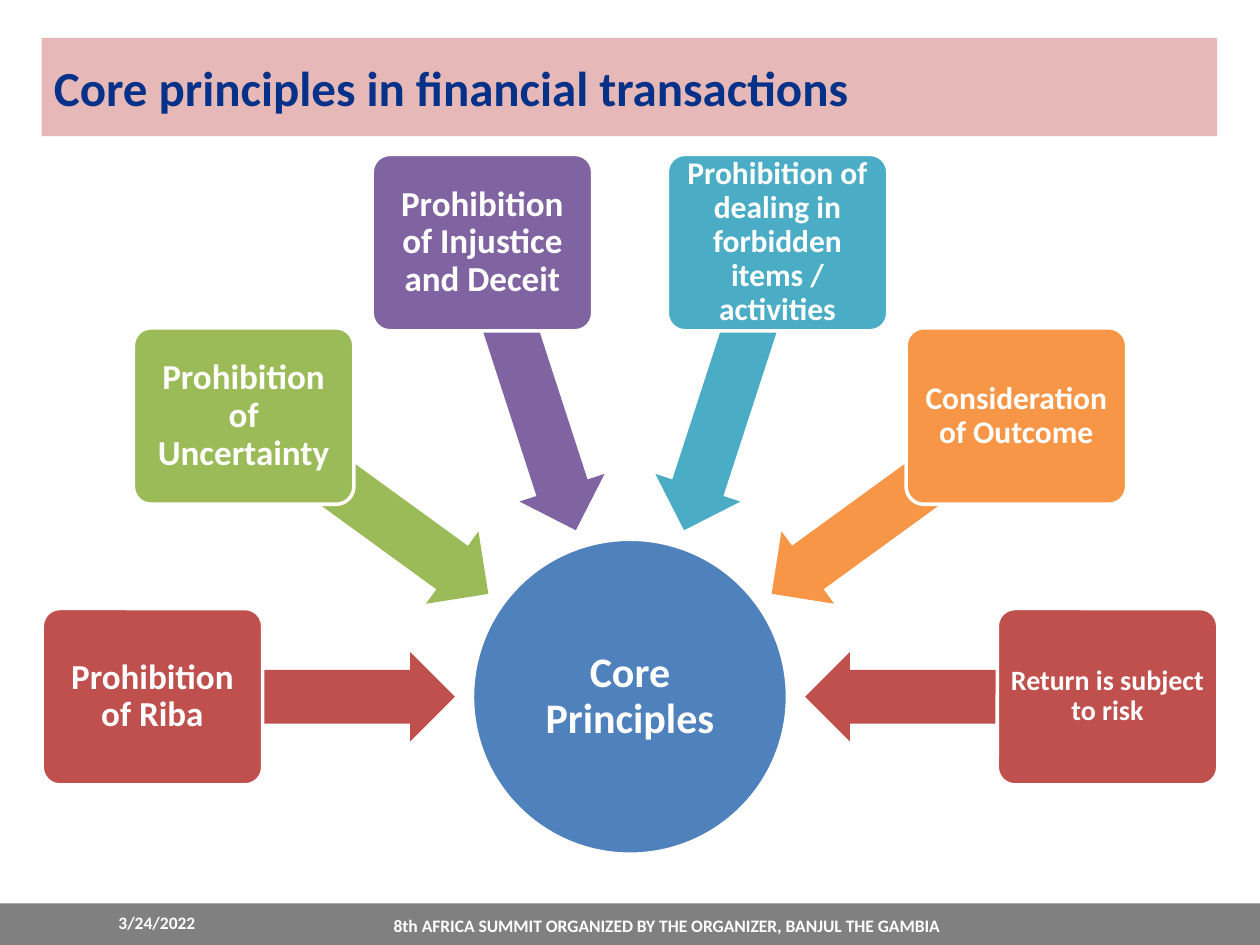
from math import cos, radians, sin

from pptx import Presentation
from pptx.dml.color import RGBColor
from pptx.enum.shapes import MSO_SHAPE as Shape
from pptx.enum.text import MSO_ANCHOR as Anchor, PP_ALIGN as Align
from pptx.util import Inches, Pt

COLORS = {
    "white": "FFFFFF", "navy": "063188", "pink": "E6B9B8", "gray": "808080",
    "blue": "4F81BD", "red": "C0504D", "green": "9BBB59", "purple": "8064A2",
    "teal": "4BACC6", "orange": "F79646",
}
HUB_X, HUB_Y, HUB_SIZE = 5, 5.53, 2.5
BOX_RADIUS, BOX_WIDTH, BOX_HEIGHT = 3.79, 1.75, 1.4
ARROW_RADIUS, ARROW_LENGTH, ARROW_HEIGHT = 2.59, 2.4, 0.71
ANGLE_STEP = 36
PRINCIPLES = [
    ("Prohibition of Riba", "red", 20),
    ("Prohibition of Uncertainty", "green", 20),
    ("Prohibition of Injustice and Deceit", "purple", 20),
    ("Prohibition of dealing in forbidden items / activities", "teal", 18),
    ("Consideration of Outcome", "orange", 18),
    ("Return is subject to risk", "red", 16),
]


def color(name):
    """Return the named colour."""
    return RGBColor.from_string(COLORS[name])


def add_filled(slide, kind, left, top, width, height, fill, outlined=False):
    """Add a flat preset shape, optionally with a white outline."""
    shape = slide.shapes.add_shape(
        kind, Inches(left), Inches(top), Inches(width), Inches(height))
    shape.shadow.inherit = False
    shape.fill.solid()
    shape.fill.fore_color.rgb = color(fill)
    if outlined:
        shape.line.color.rgb = color("white")
        shape.line.width = Pt(2)
    else:
        shape.line.fill.background()
    return shape


def write(shape, text, size, ink="white", align=Align.CENTER,
          anchor=Anchor.MIDDLE, inset=None, spacing=None):
    """Write one bold paragraph into a shape."""
    frame = shape.text_frame
    frame.word_wrap = True
    frame.vertical_anchor = anchor
    if inset is not None:
        frame.margin_left = frame.margin_right = Inches(inset)
        frame.margin_top = frame.margin_bottom = Inches(inset)
    paragraph = frame.paragraphs[0]
    paragraph.alignment = align
    paragraph.line_spacing = spacing
    run = paragraph.add_run()
    run.text = text
    run.font.name = "Calibri"
    run.font.size = Pt(size)
    run.font.bold = True
    run.font.color.rgb = color(ink)


def add_centered(slide, kind, angle, radius, width, height, fill, outlined=False):
    """Add a shape centred at an angle and distance from the hub."""
    x = HUB_X - radius * cos(radians(angle))
    y = HUB_Y - radius * sin(radians(angle))
    return add_filled(slide, kind, x - width / 2, y - height / 2,
                      width, height, fill, outlined)


def add_principle(slide, angle, text, fill, size):
    """Add a principle box and its arrow pointing at the hub."""
    arrow = add_centered(slide, Shape.LEFT_ARROW, angle, ARROW_RADIUS,
                         ARROW_LENGTH, ARROW_HEIGHT, fill)
    arrow.adjustments[0] = 0.6
    arrow.adjustments[1] = 0.5
    arrow.rotation = (180 + angle) % 360
    box = add_centered(slide, Shape.ROUNDED_RECTANGLE, angle, BOX_RADIUS,
                       BOX_WIDTH, BOX_HEIGHT, fill, outlined=True)
    box.adjustments[0] = 0.1
    write(box, text, size, inset=0.03 if size == 16 else 0.04, spacing=0.9)


def add_footer_text(slide, text, left, top, width, height):
    """Add a small centred text on the footer band."""
    box = slide.shapes.add_textbox(
        Inches(left), Inches(top), Inches(width), Inches(height))
    write(box, text, 10, anchor=Anchor.TOP)


def main():
    """Build and save the slide."""
    deck = Presentation()
    deck.slide_width, deck.slide_height = Inches(10), Inches(7.5)
    slide = deck.slides.add_slide(deck.slide_layouts[6])

    add_filled(slide, Shape.RECTANGLE, 0, 7.17, 10, 0.33, "gray")
    title = add_filled(slide, Shape.RECTANGLE, 0.33, 0.3, 9.33, 0.78, "pink")
    write(title, "Core principles in financial transactions", 28, "navy", Align.LEFT)

    hub = add_centered(slide, Shape.OVAL, 0, 0, HUB_SIZE, HUB_SIZE, "blue", outlined=True)
    write(hub, "Core Principles", 24, inset=0.02, spacing=0.9)
    for index, (text, fill, size) in enumerate(PRINCIPLES):
        add_principle(slide, index * ANGLE_STEP, text, fill, size)

    add_footer_text(slide, "8th AFRICA SUMMIT ORGANIZED BY THE ORGANIZER, BANJUL THE GAMBIA",
                    2.25, 7.21, 6.08, 0.23)
    add_footer_text(slide, "3/24/2022", 0.33, 7.19, 1.83, 0.25)
    deck.save("out.pptx")


if __name__ == "__main__":
    main()
